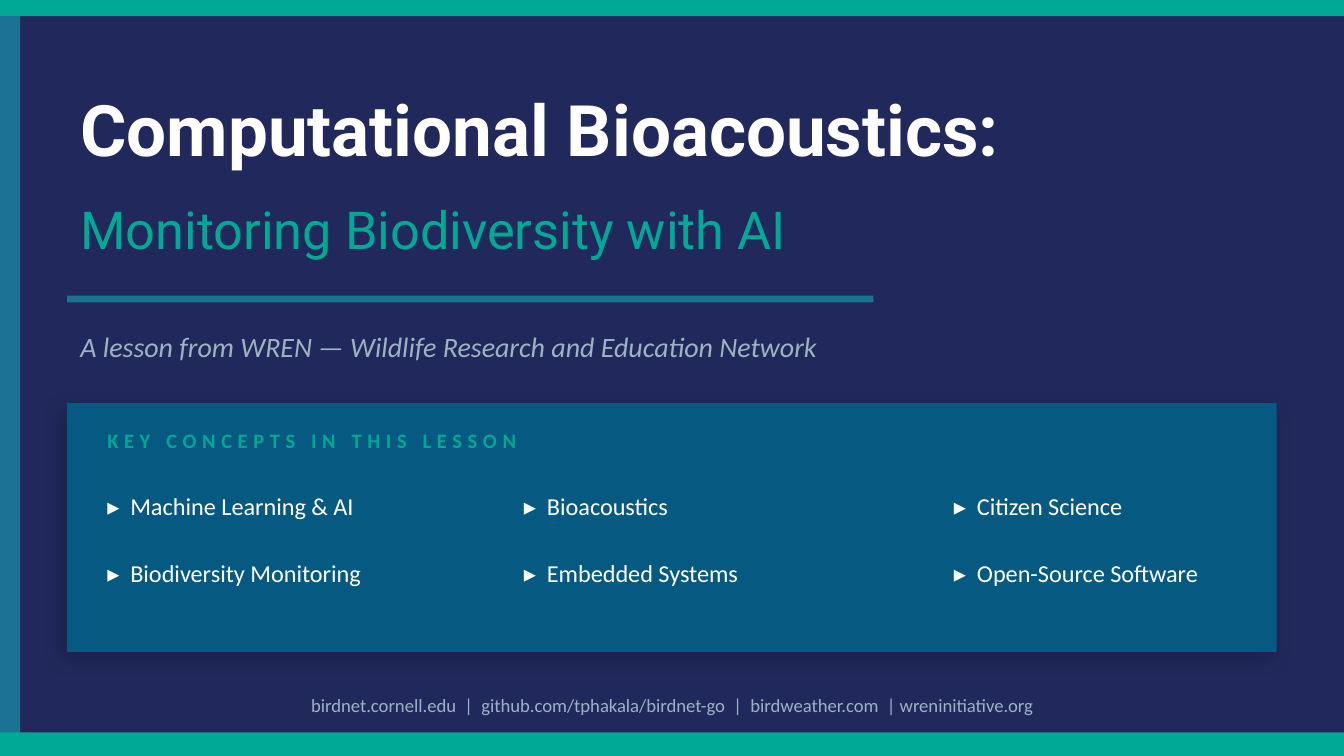
from lxml import etree
from pptx import Presentation
from pptx.dml.color import RGBColor
from pptx.enum.shapes import MSO_SHAPE
from pptx.enum.text import MSO_ANCHOR, PP_ALIGN
from pptx.oxml.ns import qn
from pptx.util import Inches, Pt

RECTANGLE = MSO_SHAPE.RECTANGLE
MIDDLE = MSO_ANCHOR.MIDDLE
LEFT, CENTER = PP_ALIGN.LEFT, PP_ALIGN.CENTER

COLORS = {
    "navy": "21295C",
    "green": "00A896",
    "teal": "1C7293",
    "blue": "065A82",
    "gray": "9EB3C2",
    "white": "FFFFFF",
    "black": "000000",
}

# Content
TITLE = "Computational Bioacoustics:"
SUBTITLE = "Monitoring Biodiversity with AI"
TAGLINE = "A lesson from WREN — Wildlife Research and Education Network"
CONCEPTS_HEADING = "KEY CONCEPTS IN THIS LESSON"
CONCEPTS = [
    ["Machine Learning & AI", "Bioacoustics", "Citizen Science"],
    ["Biodiversity Monitoring", "Embedded Systems", "Open-Source Software"],
]
LINKS = ("birdnet.cornell.edu  |  github.com/tphakala/birdnet-go"
         "  |  birdweather.com  | wreninitiative.org")

# Text formats
FORMATS = {
    "title": {"name": "Roboto", "size": Pt(38), "bold": True, "color": "white"},
    "subtitle": {"name": "Roboto", "size": Pt(28), "color": "green"},
    "tagline": {"name": "Calibri", "size": Pt(15), "italic": True, "color": "gray"},
    "heading": {"name": "Calibri", "size": Pt(11), "bold": True, "color": "green"},
    "concept": {"name": "Calibri", "size": Pt(13), "color": "white"},
    "links": {"name": "Calibri", "size": Pt(10), "color": "gray"},
}

# Layout in inches, on a 16:9 slide
WIDTH = 10
HEIGHT = WIDTH * 9 / 16
MARGIN = 0.5
COLUMN_LEFTS = [0.7, 3.8, 7]
FIRST_ROW_TOP, ROW_STEP = 3.55, 0.5
TOP_BAR = 0.12
BOTTOM_BAR_TOP = 5.45


def rgb(color):
    return RGBColor.from_string(COLORS[color])


def add_block(slide, box, color):
    shape = slide.shapes.add_shape(RECTANGLE, *map(Inches, box))
    shape.shadow.inherit = False
    shape.fill.solid()
    shape.fill.fore_color.rgb = rgb(color)
    shape.line.fill.background()
    return shape


def add_shadow(shape, color, opacity, blur, distance, angle):
    effects = shape.element.spPr.find(qn("a:effectLst"))
    shadow = etree.SubElement(
        effects, qn("a:outerShdw"), blurRad=str(Pt(blur)), dist=str(Pt(distance)),
        dir=str(angle * 60000), algn="bl", rotWithShape="0")
    shade = etree.SubElement(shadow, qn("a:srgbClr"), val=COLORS[color])
    etree.SubElement(shade, qn("a:alpha"), val=str(opacity * 1000))


def add_text(slide, box, text, style, alignment=LEFT):
    frame = slide.shapes.add_textbox(*map(Inches, box)).text_frame
    frame.word_wrap = True
    frame.vertical_anchor = MIDDLE
    paragraph = frame.paragraphs[0]
    paragraph.alignment = alignment
    run = paragraph.add_run()
    run.text = text
    for key, value in FORMATS[style].items():
        if key == "color":
            run.font.color.rgb = rgb(value)
        else:
            setattr(run.font, key, value)
    return run


def main():
    presentation = Presentation()
    presentation.slide_width = Inches(WIDTH)
    presentation.slide_height = Inches(HEIGHT)
    slide = presentation.slides.add_slide(presentation.slide_layouts[6])
    slide.background.fill.solid()
    slide.background.fill.fore_color.rgb = rgb("navy")

    # Top and side bars
    add_block(slide, (0, 0, WIDTH, TOP_BAR), "green")
    add_block(slide, (0, TOP_BAR, 0.15, HEIGHT - TOP_BAR), "teal")

    # Title area
    add_text(slide, (MARGIN, 0.5, 9, 0.9), TITLE, "title")
    add_text(slide, (MARGIN, 1.35, 9, 0.7), SUBTITLE, "subtitle")
    add_block(slide, (MARGIN, 2.2, 6, 0.05), "teal")
    add_text(slide, (MARGIN, 2.35, 7, 0.45), TAGLINE, "tagline")

    # Key concepts panel
    panel = add_block(slide, (MARGIN, 3, 9, 1.85), "blue")
    add_shadow(panel, "black", opacity=20, blur=10, distance=4, angle=135)
    heading = add_text(slide, (COLUMN_LEFTS[0], 3.1, 8.6, 0.35),
                       CONCEPTS_HEADING, "heading")
    heading.font._element.set("spc", "300")
    for row, concepts in enumerate(CONCEPTS):
        top = FIRST_ROW_TOP + row * ROW_STEP
        for left, concept in zip(COLUMN_LEFTS, concepts):
            add_text(slide, (left, top, 2.9, 0.42), f"▸  {concept}", "concept")

    # Bottom bar and links
    add_block(slide, (0, BOTTOM_BAR_TOP, WIDTH, HEIGHT - BOTTOM_BAR_TOP), "green")
    add_text(slide, (0.4, 5.1, 9.2, 0.3), LINKS, "links", CENTER)

    presentation.save("out.pptx")


if __name__ == "__main__":
    main()
